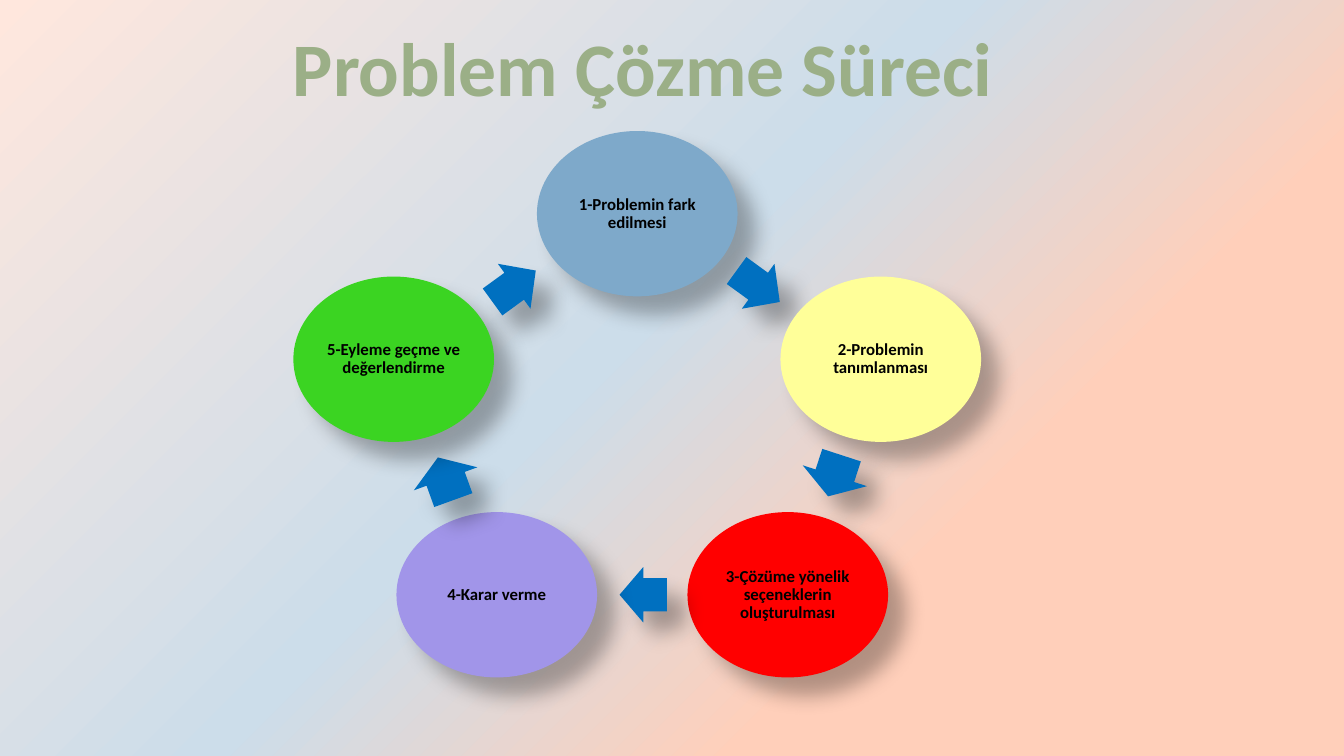
from dataclasses import dataclass
from math import cos, radians, sin

from lxml.etree import SubElement
from pptx import Presentation
from pptx.dml.color import RGBColor
from pptx.enum.shapes import MSO_SHAPE
from pptx.enum.text import MSO_ANCHOR, MSO_AUTO_SIZE, PP_ALIGN
from pptx.oxml.ns import qn
from pptx.shapes.autoshape import Shape
from pptx.slide import Slide
from pptx.text.text import TextFrame, _Run
from pptx.util import Inches, Pt


@dataclass(frozen=True)
class Theme:
    font: str = "Calibri"
    title_size: int = 54
    step_size: int = 12
    step_text: str = "000000"
    arrow: str = "0070C0"
    shadow: str = "000000"
    backdrop: tuple = ((29, "FFCFBA"), (54, "CCDDEA"), (100, "FFE7DD"))
    title: tuple = ((0, "4A553E"), (78, "9BAF87"), (100, "F5F7F3"))


@dataclass(frozen=True)
class Arrow:
    x: float
    y: float
    length: float
    breadth: float
    angle: float


@dataclass(frozen=True)
class Step:
    label: str
    color: str
    arrow: Arrow
    nudge: float = 0


THEME = Theme()
RING_X, RING_Y = 6.32, 4.21
RADIUS_X, RADIUS_Y = 2.54, 2.09
OVAL_WIDTH, OVAL_HEIGHT = 1.99, 1.64

STEPS = [
    Step("1-Problemin fark edilmesi", "7EA9CA", Arrow(7.52, 2.84, 0.53, 0.55, 36)),
    Step("2-Problemin tanımlanması", "FFFF99", Arrow(8.28, 4.72, 0.43, 0.67, 108)),
    Step("3-Çözüme yönelik seçeneklerin oluşturulması", "FF0000",
         Arrow(6.38, 5.9, 0.47, 0.55, 180)),
    Step("4-Karar verme", "A195E9", Arrow(4.42, 4.75, 0.45, 0.67, 250.1), nudge=0.1),
    Step("5-Eyleme geçme ve değerlendirme", "3BD422", Arrow(5.1, 2.84, 0.53, 0.55, 324)),
]


def set_gradient(gradient, stops: tuple, corner: bool) -> None:
    """Refill a gradFill: circular from the bottom right corner, or top to bottom."""
    for child in list(gradient):
        gradient.remove(child)
    stop_list = SubElement(gradient, qn("a:gsLst"))
    for position, color in stops:
        stop = SubElement(stop_list, qn("a:gs"), pos=str(position * 1000))
        SubElement(stop, qn("a:srgbClr"), val=color)
    if corner:
        circle = SubElement(gradient, qn("a:path"), {"path": "circle"})
        SubElement(circle, qn("a:fillToRect"), l="100000", t="100000")
    else:
        SubElement(gradient, qn("a:lin"), ang="5400000", scaled="0")


def add_bold_run(frame: TextFrame, text: str, size: int) -> _Run:
    paragraph = frame.paragraphs[0]
    paragraph.alignment = PP_ALIGN.CENTER
    run = paragraph.add_run()
    run.text = text
    run.font.name = THEME.font
    run.font.size = Pt(size)
    run.font.bold = True
    return run


def add_centred_shape(slide: Slide, kind: MSO_SHAPE, x: float, y: float,
                      width: float, height: float, color: str) -> Shape:
    """Add a filled shape with a soft shadow, centred on x and y."""
    shape = slide.shapes.add_shape(kind, Inches(x - width / 2), Inches(y - height / 2),
                                   Inches(width), Inches(height))
    shape.fill.solid()
    shape.fill.fore_color.rgb = RGBColor.from_string(color)
    shape.line.fill.background()
    shape.shadow.inherit = False
    effects = shape._element.spPr.find(qn("a:effectLst"))
    shadow = SubElement(effects, qn("a:outerShdw"), blurRad=str(Pt(15)), dist=str(Pt(18)),
                        dir="2700000", rotWithShape="0")
    shade = SubElement(shadow, qn("a:srgbClr"), val=THEME.shadow)
    SubElement(shade, qn("a:alpha"), val="30000")
    return shape


def add_step(slide: Slide, index: int, step: Step) -> None:
    turn = radians(index * 360 / len(STEPS))
    oval = add_centred_shape(slide, MSO_SHAPE.OVAL,
                             RING_X + RADIUS_X * sin(turn) + step.nudge,
                             RING_Y - RADIUS_Y * cos(turn),
                             OVAL_WIDTH, OVAL_HEIGHT, step.color)
    frame = oval.text_frame
    frame.word_wrap = True
    frame.vertical_anchor = MSO_ANCHOR.MIDDLE
    frame.margin_left = frame.margin_right = frame.margin_top = frame.margin_bottom = 0
    run = add_bold_run(frame, step.label, THEME.step_size)
    run.font.color.rgb = RGBColor.from_string(THEME.step_text)
    frame.paragraphs[0].line_spacing = 0.9


def add_arrow(slide: Slide, arrow: Arrow) -> None:
    pointer = add_centred_shape(slide, MSO_SHAPE.RIGHT_ARROW, arrow.x, arrow.y,
                                arrow.length, arrow.breadth, THEME.arrow)
    pointer.adjustments[0] = 0.6
    pointer.adjustments[1] = 0.5
    pointer.rotation = arrow.angle


def add_title(slide: Slide) -> None:
    title = slide.shapes.add_textbox(Inches(2.77), Inches(0.16), Inches(7.21), Inches(1.01))
    frame = title.text_frame
    frame.word_wrap = False
    frame.auto_size = MSO_AUTO_SIZE.SHAPE_TO_FIT_TEXT
    run = add_bold_run(frame, "Problem Çözme Süreci", THEME.title_size)
    run.font.fill.gradient()
    set_gradient(run._r.rPr.find(qn("a:gradFill")), THEME.title, corner=False)


def main() -> None:
    deck = Presentation()
    deck.slide_width, deck.slide_height = Inches(13.33), Inches(7.5)
    slide = deck.slides.add_slide(deck.slide_layouts[6])
    slide.background.fill.gradient()
    backdrop = next(slide._element.iter(qn("a:gradFill")))
    set_gradient(backdrop, THEME.backdrop, corner=True)
    for index, step in enumerate(STEPS):
        add_step(slide, index, step)
        add_arrow(slide, step.arrow)
    add_title(slide)
    deck.save("out.pptx")


if __name__ == "__main__":
    main()
